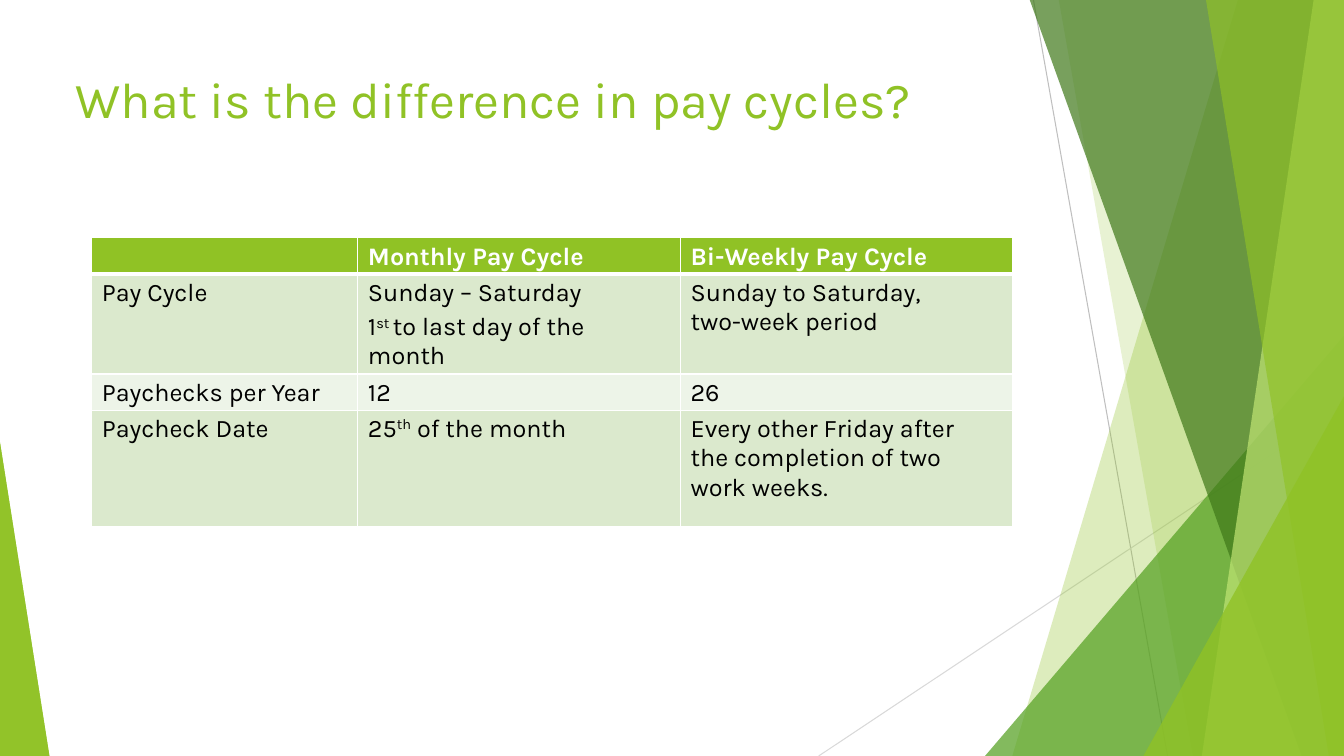
from dataclasses import dataclass

from lxml import etree
from pptx import Presentation
from pptx.dml.color import RGBColor
from pptx.enum.shapes import MSO_CONNECTOR, MSO_SHAPE
from pptx.oxml.ns import qn
from pptx.util import Emu, Pt

STRAIGHT = MSO_CONNECTOR.STRAIGHT
TRIANGLE = MSO_SHAPE.ISOSCELES_TRIANGLE

PX = 9144  # 100 px to the inch
WIDTH, HEIGHT = 1333, 750
BLEED_TOP = -1
FONT = "Karla"
COLORS = {
    "lime": "90C226", "leaf": "54A021", "forest": "3F7819", "pale": "C0E474",
    "header": "90C225", "band_dark": "DBE9CD", "band_light": "EDF4E8",
    "gray": "BFBFBF", "light_gray": "D9D9D9", "white": "FFFFFF", "black": "000000",
}


@dataclass
class Ray:
    start: tuple[int, int]
    end: tuple[int, int]
    color: str


@dataclass
class Facet:
    points: list[tuple[int, int]]
    color: str
    opacity: int


@dataclass
class Wedge:
    left: int
    top: int
    width: int
    apex: int  # 0 puts the tip on the left, 1 on the right
    color: str
    opacity: int


@dataclass
class Run:
    text: str
    baseline: int = 0


@dataclass
class Row:
    height: int
    fill: str
    cells: list[list[list[Run]]]
    space_before: float = 3.1
    header: bool = False


def px(n: int) -> Emu:
    return Emu(n * PX)


def rgb(name: str) -> RGBColor:
    return RGBColor.from_string(COLORS[name])


def panel(top_x: int, bottom_x: int, color: str, opacity: int) -> Facet:
    """Full-height facet with a slanted left side, reaching the right edge."""
    points = [(top_x, BLEED_TOP), (WIDTH, BLEED_TOP), (WIDTH, HEIGHT), (bottom_x, HEIGHT)]
    return Facet(points, color, opacity)


def plain(*lines: str) -> list[list[Run]]:
    return [[Run(line)] for line in lines]


RAYS = [
    Ray((1025, 0), (1158, HEIGHT), "gray"),
    Ray((WIDTH, 403), (812, HEIGHT), "light_gray"),
]
DECOR = [
    panel(1228, 1004, "lime", 30),
    panel(1050, 1183, "lime", 20),
    Wedge(977, 333, 356, 1, "leaf", 72),
    panel(1021, 1291, "forest", 70),
    panel(1303, 1192, "pale", 70),
    panel(1196, 1318, "lime", 65),
    Wedge(1134, 393, 199, 1, "lime", 80),
    Wedge(0, 439, 49, 0, "lime", 85),
    Facet([(0, 439), (0, HEIGHT), (49, HEIGHT)], "header", 85),
]

COLUMNS = [264, 320, 329]
RIGHT_MARGINS = [0, 20, 50]
ROWS = [
    Row(36, "header", [[], plain("Monthly Pay Cycle"), plain("Bi-Weekly Pay Cycle")],
        header=True),
    Row(99, "band_dark", [
        plain("Pay Cycle"),
        plain("Sunday – Saturday")
        + [[Run("1"), Run("st ", 25), Run("to last day of the month")]],
        plain("Sunday to Saturday, two-week period"),
    ]),
    Row(36, "band_light", [plain("Paychecks per Year"), plain("12"), plain("26")]),
    Row(115, "band_dark", [
        plain("Paycheck Date"),
        [[Run("25"), Run("th", 30), Run(" of the month")]],
        plain("Every other Friday after the completion of two work weeks."),
    ], space_before=3.2),
]


def set_attrs(target, values: dict) -> None:
    for name, value in values.items():
        setattr(target, name, value)


def add_ray(s, ray: Ray) -> None:
    c = s.shapes.add_connector(STRAIGHT, *map(px, ray.start + ray.end))
    c.line.color.rgb = rgb(ray.color)
    c.line.width = Pt(0.75)
    etree.SubElement(c._element.spPr, qn("a:effectLst"))


def add_decor(s, item: Facet | Wedge) -> None:
    if isinstance(item, Wedge):
        sp = s.shapes.add_shape(TRIANGLE, px(item.left), px(item.top),
                                px(item.width), px(HEIGHT - item.top))
        sp.adjustments[0] = item.apex
    else:
        builder = s.shapes.build_freeform(*item.points[0], scale=PX)
        builder.add_line_segments(item.points[1:], close=True)
        sp = builder.convert_to_shape()
    sp.shadow.inherit = False
    sp.line.fill.background()
    sp.fill.solid()
    sp.fill.fore_color.rgb = rgb(item.color)
    color = sp._element.spPr.find(".//" + qn("a:srgbClr"))
    etree.SubElement(color, qn("a:alpha"), val=str(item.opacity * 1000))


def add_paragraph(p, runs: list[Run], size: int, color: str,
                  space_before: float, bold: bool = False) -> None:
    p.space_before = Pt(space_before)
    for run in runs:
        r = p.add_run()
        r.text = run.text
        set_attrs(r.font, {"name": FONT, "size": Pt(size), "bold": bold})
        r.font.color.rgb = rgb(color)
        if run.baseline:
            r._r.get_or_add_rPr().set("baseline", str(run.baseline * 1000))


def add_title(s, text: str) -> None:
    tf = s.shapes.add_textbox(px(74), px(67), px(940), px(144)).text_frame
    set_attrs(tf, {"word_wrap": True, "margin_left": px(1), "margin_top": px(1),
                   "margin_right": 0, "margin_bottom": 0})
    add_paragraph(tf.paragraphs[0], [Run(text)], 36, "lime", 1)


def add_borders(cell, widths: dict[str, int]) -> None:
    tcPr = cell._tc.get_or_add_tcPr()
    for side, width in widths.items():
        ln = etree.SubElement(tcPr, qn(f"a:ln{side}"), w=str(Pt(width)))
        fill = etree.SubElement(ln, qn("a:solidFill"))
        etree.SubElement(fill, qn("a:srgbClr"), val=COLORS["white"])


def add_pay_table(s) -> None:
    heights = [row.height for row in ROWS]
    table = s.shapes.add_table(len(ROWS), len(COLUMNS), px(91), px(236),
                               px(sum(COLUMNS)), px(sum(heights))).table
    table.horz_banding = False
    for column, width in zip(table.columns, COLUMNS):
        column.width = px(width)
    for i, row in enumerate(ROWS):
        table.rows[i].height = px(row.height)
        borders = {"L": 1, "R": 1, "T": 3 if i == 1 else 1, "B": 3 if row.header else 1}
        for j, paragraphs in enumerate(row.cells):
            cell = table.cell(i, j)
            set_attrs(cell, {"margin_left": px(10), "margin_top": px(4),
                             "margin_right": px(RIGHT_MARGINS[j]), "margin_bottom": 0})
            add_borders(cell, borders)
            cell.fill.solid()
            cell.fill.fore_color.rgb = rgb(row.fill)
            tf = cell.text_frame
            for k, runs in enumerate(paragraphs):
                p = tf.add_paragraph() if k else tf.paragraphs[0]
                add_paragraph(p, runs, 18, "white" if row.header else "black",
                              row.space_before, row.header)


def main() -> None:
    prs = Presentation()
    set_attrs(prs, {"slide_width": px(WIDTH), "slide_height": px(HEIGHT)})
    s = prs.slides.add_slide(prs.slide_layouts[6])
    for ray in RAYS:
        add_ray(s, ray)
    for item in DECOR:
        add_decor(s, item)
    add_title(s, "What is the difference in pay cycles?")
    add_pay_table(s)
    prs.save("out.pptx")


if __name__ == "__main__":
    main()
